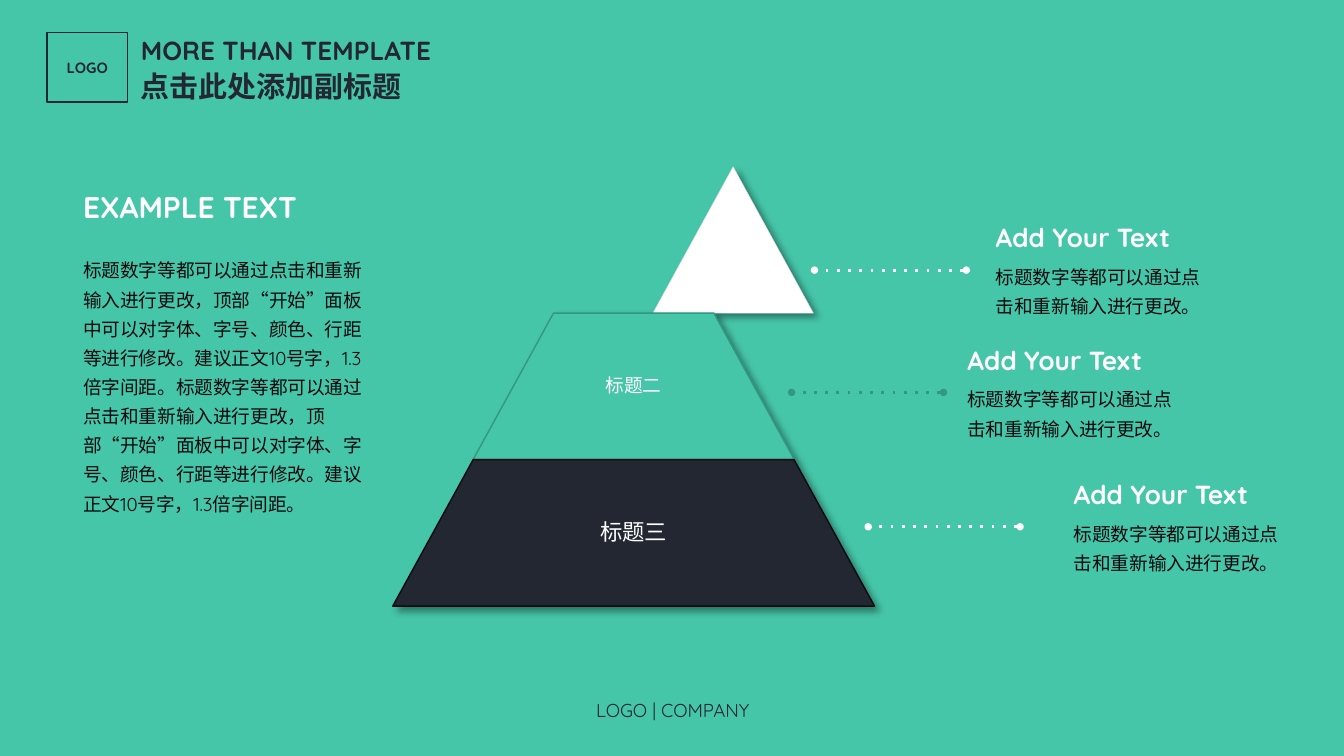
from dataclasses import dataclass

from lxml.etree import SubElement
from pptx import Presentation
from pptx.dml.color import RGBColor
from pptx.enum.lang import MSO_LANGUAGE_ID
from pptx.enum.shapes import MSO_CONNECTOR, MSO_SHAPE
from pptx.enum.text import MSO_ANCHOR, MSO_AUTO_SIZE, PP_ALIGN
from pptx.oxml.ns import qn
from pptx.util import Inches, Pt


@dataclass(frozen=True)
class Theme:
    green: str = "46C6A9"
    deep_green: str = "349782"
    navy: str = "222732"
    ink: str = "090A0D"
    white: str = "FFFFFF"
    grey: str = "D9D9D9"
    latin: str = "Quicksand"
    chinese: str = "Noto Sans CJK SC"
    logo: float = 8
    body: float = 10
    tier: float = 12
    title: float = 14
    subtitle: float = 15.5
    heading: float = 16


THEME = Theme()


@dataclass(frozen=True)
class Style:
    size: float
    color: str
    bold: bool = False
    spacing: float = 1.0
    align: PP_ALIGN = PP_ALIGN.LEFT
    latin: str = THEME.latin


@dataclass(frozen=True)
class Tier:
    center: float
    fill: str
    line: str
    line_width: float
    label: str = ""
    label_size: float = 0
    inset: float = 0


@dataclass(frozen=True)
class Callout:
    line_end: float
    middle: float
    text_left: float
    color: str


BODY = Style(THEME.body, THEME.ink, spacing=1.3)
CALLOUT_HEAD = Style(THEME.title, THEME.white, bold=True)
TIER_TOP, TIER_HEIGHT, TIER_STEP, TIER_SLOPE = 1.24, 1.09, 1.195, 0.549
LINE_LENGTH = 1.13
SENTENCE = "标题数字等都可以通过点击和重新输入进行更改"
LONG_TEXT = f"{SENTENCE}，顶部“开始”面板中可以对字体、字号、颜色、行距等进行修改。建议正文10号字，1.3倍字间距。"

TIERS = [
    Tier(5.455, THEME.white, THEME.grey, 0.25),
    Tier(4.715, THEME.green, THEME.deep_green, 0.75, "标题二", THEME.body, 0.01),
    Tier(4.715, THEME.navy, THEME.ink, 0.75, "标题三", THEME.tier, 0.02),
]
CALLOUTS = [
    Callout(7.19, 2.01, 7.31, THEME.white),
    Callout(7.02, 2.92, 7.1, THEME.deep_green),
    Callout(7.59, 3.92, 7.89, THEME.white),
]


def rgb(color: str) -> RGBColor:
    return RGBColor.from_string(color)


def write(frame, *lines: tuple[str, Style]) -> None:
    frame.text = "\n".join(text for text, _ in lines)
    for para, (_, style) in zip(frame.paragraphs, lines):
        para.alignment = style.align
        para.line_spacing = style.spacing
        for span in para.runs:
            font = span.font
            font.size, font.bold = Pt(style.size), style.bold
            font.color.rgb = rgb(style.color)
            font.name = style.latin
            if not span.text.isascii():
                font.language_id = MSO_LANGUAGE_ID.SIMPLIFIED_CHINESE
            east_asian = SubElement(font._element, qn("a:ea"))
            east_asian.set("typeface", THEME.chinese)


def add_text(shapes, left: float, top: float, width: float, height: float,
             *lines: tuple[str, Style], wrap: bool = True, grow: bool = True,
             anchor: MSO_ANCHOR = MSO_ANCHOR.TOP):
    box = shapes.add_textbox(Inches(left), Inches(top), Inches(width), Inches(height))
    frame = box.text_frame
    frame.word_wrap = wrap
    frame.auto_size = MSO_AUTO_SIZE.SHAPE_TO_FIT_TEXT if grow else MSO_AUTO_SIZE.NONE
    frame.vertical_anchor = anchor
    write(frame, *lines)
    return box


def add_shadow(shape) -> None:
    effects = SubElement(shape._element.spPr, qn("a:effectLst"))
    shadow = SubElement(effects, qn("a:outerShdw"), blurRad=str(Pt(4)), dist=str(Pt(3)),
                        dir=str(45 * 60000), algn="tl", rotWithShape="0")
    color = SubElement(shadow, qn("a:srgbClr"), val="000000")
    SubElement(color, qn("a:alpha"), val="40000")


def add_tier(shapes, index: int, tier: Tier) -> None:
    width = TIER_STEP * (index + 1)
    top = TIER_TOP + TIER_HEIGHT * index
    shape = shapes.add_shape(MSO_SHAPE.TRAPEZOID, Inches(tier.center - width / 2),
                             Inches(top), Inches(width), Inches(TIER_HEIGHT))
    shape.adjustments[0] = TIER_SLOPE
    shape.fill.solid()
    shape.fill.fore_color.rgb = rgb(tier.fill)
    shape.line.color.rgb = rgb(tier.line)
    shape.line.width = Pt(tier.line_width)
    add_shadow(shape)
    if tier.label:
        label_width = width * 0.65
        style = Style(tier.label_size, THEME.white, spacing=0.9, align=PP_ALIGN.CENTER)
        box = add_text(shapes, tier.center - label_width / 2, top, label_width, TIER_HEIGHT,
                       (tier.label, style), grow=False, anchor=MSO_ANCHOR.MIDDLE)
        frame = box.text_frame
        frame.margin_left = frame.margin_right = Inches(tier.inset)
        frame.margin_top = frame.margin_bottom = Inches(tier.inset)


def add_callout(shapes, callout: Callout) -> None:
    """Draw a dotted line with round ends, and the heading and text beside it."""
    y = Inches(callout.middle)
    connector = shapes.add_connector(MSO_CONNECTOR.STRAIGHT, Inches(callout.line_end), y,
                                     Inches(callout.line_end - LINE_LENGTH), y)
    connector.line.color.rgb = rgb(callout.color)
    connector.line.width = Pt(1.5)
    outline = connector.line._get_or_add_ln()
    SubElement(outline, qn("a:prstDash"), val="dot")
    for end in ("a:headEnd", "a:tailEnd"):
        SubElement(outline, qn(end), type="oval", w="sm", len="sm")
    SubElement(connector._element.spPr, qn("a:effectLst"))
    add_text(shapes, callout.text_left, callout.middle - 0.13, 1.8, 0.53,
             (f"{SENTENCE}。", BODY))
    add_text(shapes, callout.text_left, callout.middle - 0.41, 1.52, 0.34,
             ("Add Your Text", CALLOUT_HEAD), wrap=False)


def add_header(shapes) -> None:
    add_text(shapes, 0.95, 0.18, 2.48, 0.64,
             ("MORE THAN TEMPLATE", Style(THEME.title, THEME.navy, True, 1.1)),
             ("点击此处添加副标题",
              Style(THEME.subtitle, THEME.navy, True, 1.1, latin=THEME.chinese)),
             anchor=MSO_ANCHOR.MIDDLE)
    logo_box = shapes.add_shape(MSO_SHAPE.RECTANGLE, Inches(0.35), Inches(0.24),
                                Inches(0.6), Inches(0.52))
    logo_box.shadow.inherit = False
    logo_box.fill.background()
    logo_box.line.color.rgb = rgb(THEME.navy)
    logo_box.line.width = Pt(0.75)
    logo_box.text_frame.vertical_anchor = MSO_ANCHOR.MIDDLE
    write(logo_box.text_frame,
          ("LOGO", Style(THEME.logo, THEME.navy, True, align=PP_ALIGN.CENTER)))


def main() -> None:
    deck = Presentation()
    deck.slide_width = Inches(10)
    deck.slide_height = deck.slide_width * 9 // 16
    slide = deck.slides.add_slide(deck.slide_layouts[6])
    slide.background.fill.solid()
    slide.background.fill.fore_color.rgb = rgb(THEME.green)
    shapes = slide.shapes

    add_header(shapes)
    add_text(shapes, 3.93, 5.18, 2.15, 0.24,
             ("LOGO | COMPANY",
              Style(THEME.body, THEME.navy, spacing=0.8, align=PP_ALIGN.CENTER)))
    pyramid = shapes.add_group_shape()
    for index, tier in enumerate(TIERS):
        add_tier(pyramid.shapes, index, tier)
    for callout in CALLOUTS:
        add_callout(shapes, callout)
    add_text(shapes, 0.52, 1.83, 2.29, 2.06, (LONG_TEXT * 2, BODY))
    add_text(shapes, 0.52, 1.22, 1.93, 0.48,
             ("EXAMPLE TEXT", Style(THEME.heading, THEME.white, True, 1.5)))
    deck.save("out.pptx")


if __name__ == "__main__":
    main()
